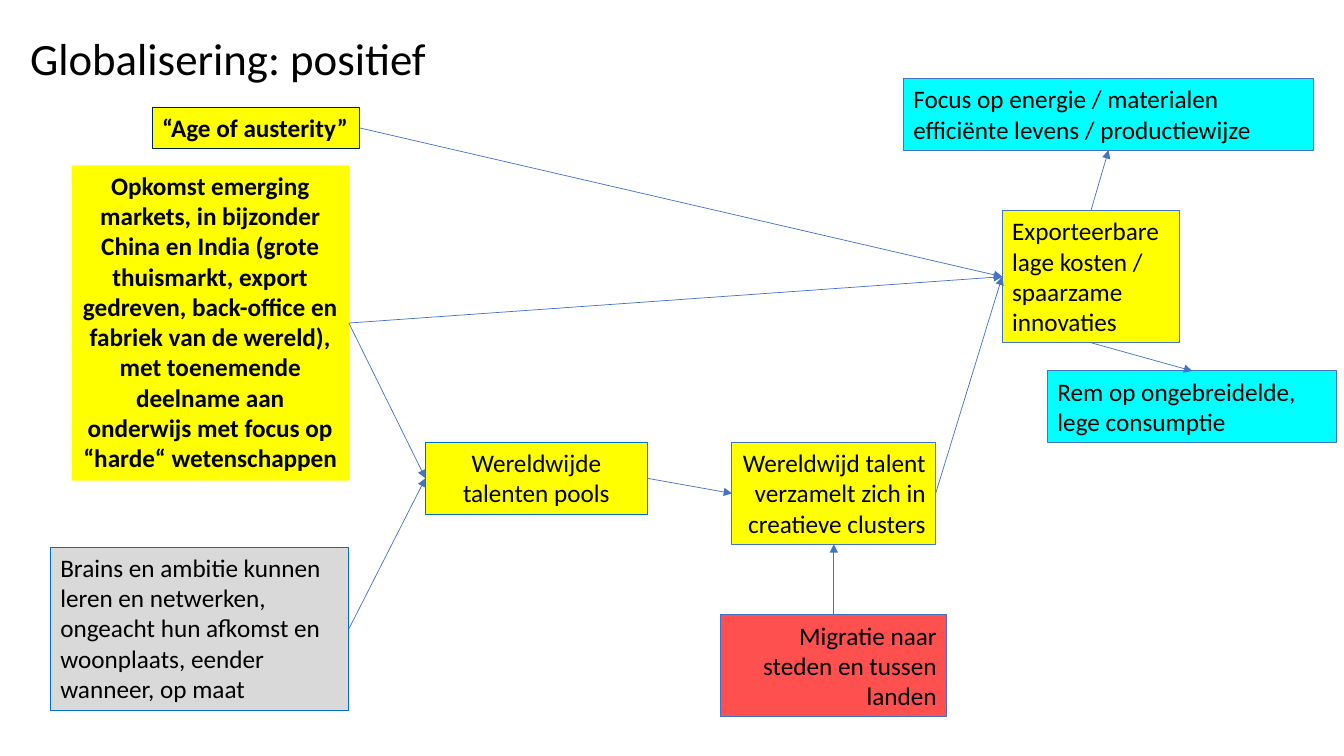
from dataclasses import dataclass

from lxml.etree import SubElement
from pptx import Presentation
from pptx.dml.color import RGBColor
from pptx.enum.shapes import MSO_CONNECTOR, MSO_SHAPE
from pptx.enum.text import MSO_ANCHOR, PP_ALIGN
from pptx.oxml.ns import qn
from pptx.shapes.autoshape import Shape
from pptx.slide import Slide
from pptx.util import Inches, Pt

COLORS = {
    "black": "000000",
    "yellow": "FFFF00",
    "cyan": "00FFFF",
    "grey": "D9D9D9",
    "red": "FF5050",
    "blue": "4472C4",
    "bright_blue": "0070C0",
    "navy": "002060",
}
TOP, LEFT, BOTTOM, RIGHT = range(4)


@dataclass(frozen=True)
class Box:
    name: str
    text: str
    left: float
    top: float
    width: float
    height: float
    fill: str
    line: str | None = "blue"
    align: PP_ALIGN = PP_ALIGN.LEFT
    bold: bool = False
    wrap: bool = True


@dataclass(frozen=True)
class Arrow:
    source: str
    source_side: int
    target: str
    target_side: int


BOXES = [
    Box("emerging", "Opkomst emerging markets, in bijzonder China en India "
        "(grote thuismarkt, export gedreven, back-office en fabriek van de wereld), "
        "met toenemende deelname aan onderwijs met focus op “harde“ wetenschappen",
        0.71, 1.64, 2.75, 3.13, "yellow", None, PP_ALIGN.CENTER, True),
    Box("pools", "Wereldwijde talenten pools",
        4.22, 4.39, 2.2, 0.71, "yellow", "bright_blue", PP_ALIGN.CENTER),
    Box("clusters", "Wereldwijd talent verzamelt zich in creatieve clusters",
        7.26, 4.39, 2.02, 1.01, "yellow", align=PP_ALIGN.RIGHT),
    Box("brains", "Brains en ambitie kunnen leren en netwerken, ongeacht hun "
        "afkomst en woonplaats, eender wanneer, op maat",
        0.5, 5.43, 2.96, 1.62, "grey", "bright_blue"),
    Box("migration", "Migratie naar steden en tussen landen",
        7.15, 6.1, 2.24, 1.01, "red", align=PP_ALIGN.RIGHT),
    Box("austerity", "“Age of austerity”",
        1.51, 1.07, 2.06, 0.4, "yellow", "navy", bold=True, wrap=False),
    Box("innovations", "Exporteerbare lage kosten / spaarzame innovaties",
        9.94, 2.09, 1.76, 1.31, "yellow"),
    Box("brake", "Rem op ongebreidelde, lege consumptie",
        10.39, 3.68, 2.87, 0.71, "cyan"),
    Box("focus", "Focus op energie / materialen efficiënte levens / productiewijze",
        8.96, 0.78, 4.07, 0.71, "cyan"),
]

ARROWS = [
    Arrow("emerging", RIGHT, "pools", LEFT),
    Arrow("pools", RIGHT, "clusters", LEFT),
    Arrow("brains", RIGHT, "pools", LEFT),
    Arrow("migration", TOP, "clusters", BOTTOM),
    Arrow("emerging", RIGHT, "innovations", LEFT),
    Arrow("clusters", RIGHT, "innovations", LEFT),
    Arrow("austerity", RIGHT, "innovations", LEFT),
    Arrow("innovations", BOTTOM, "brake", TOP),
    Arrow("innovations", TOP, "focus", BOTTOM),
]


def color(name: str) -> RGBColor:
    return RGBColor.from_string(COLORS[name])


def write_text(shape: Shape, text: str, size: int, align: PP_ALIGN, bold: bool = False) -> None:
    paragraph = shape.text_frame.paragraphs[0]
    paragraph.text = text
    paragraph.alignment = align
    paragraph.font.name = "Calibri"
    paragraph.font.size = Pt(size)
    paragraph.font.bold = bold
    paragraph.font.color.rgb = color("black")


def add_title(page: Slide, text: str) -> None:
    title = page.shapes.add_textbox(Inches(0.2), Inches(-0.12), Inches(11.5), Inches(1.45))
    title.text_frame.word_wrap = True
    title.text_frame.vertical_anchor = MSO_ANCHOR.MIDDLE
    write_text(title, text, 32, PP_ALIGN.LEFT)
    title.text_frame.paragraphs[0].line_spacing = 0.9


def add_box(page: Slide, box: Box) -> Shape:
    shape = page.shapes.add_shape(
        MSO_SHAPE.RECTANGLE,
        Inches(box.left), Inches(box.top), Inches(box.width), Inches(box.height),
    )
    shape.shadow.inherit = False
    shape.fill.solid()
    shape.fill.fore_color.rgb = color(box.fill)
    if box.line:
        shape.line.color.rgb = color(box.line)
        shape.line.width = Pt(0.75)
    else:
        shape.line.fill.background()
    shape.text_frame.word_wrap = box.wrap
    shape.text_frame.vertical_anchor = MSO_ANCHOR.TOP
    write_text(shape, box.text, 18, box.align, box.bold)
    return shape


def add_arrow(page: Slide, arrow: Arrow, shapes: dict[str, Shape]) -> None:
    connector = page.shapes.add_connector(MSO_CONNECTOR.STRAIGHT, 0, 0, 0, 0)
    connector.begin_connect(shapes[arrow.source], arrow.source_side)
    connector.end_connect(shapes[arrow.target], arrow.target_side)
    connector.line.color.rgb = color("blue")
    connector.line.width = Pt(0.5)
    SubElement(connector.line._get_or_add_ln(), qn("a:tailEnd"), type="triangle")
    SubElement(connector._element.spPr, qn("a:effectLst"))


def main() -> None:
    deck = Presentation()
    deck.slide_width = Inches(13.33)
    deck.slide_height = Inches(7.5)
    page = deck.slides.add_slide(deck.slide_layouts[6])
    add_title(page, "Globalisering: positief")
    shapes = {box.name: add_box(page, box) for box in BOXES}
    for arrow in ARROWS:
        add_arrow(page, arrow, shapes)
    deck.save("out.pptx")


if __name__ == "__main__":
    main()
